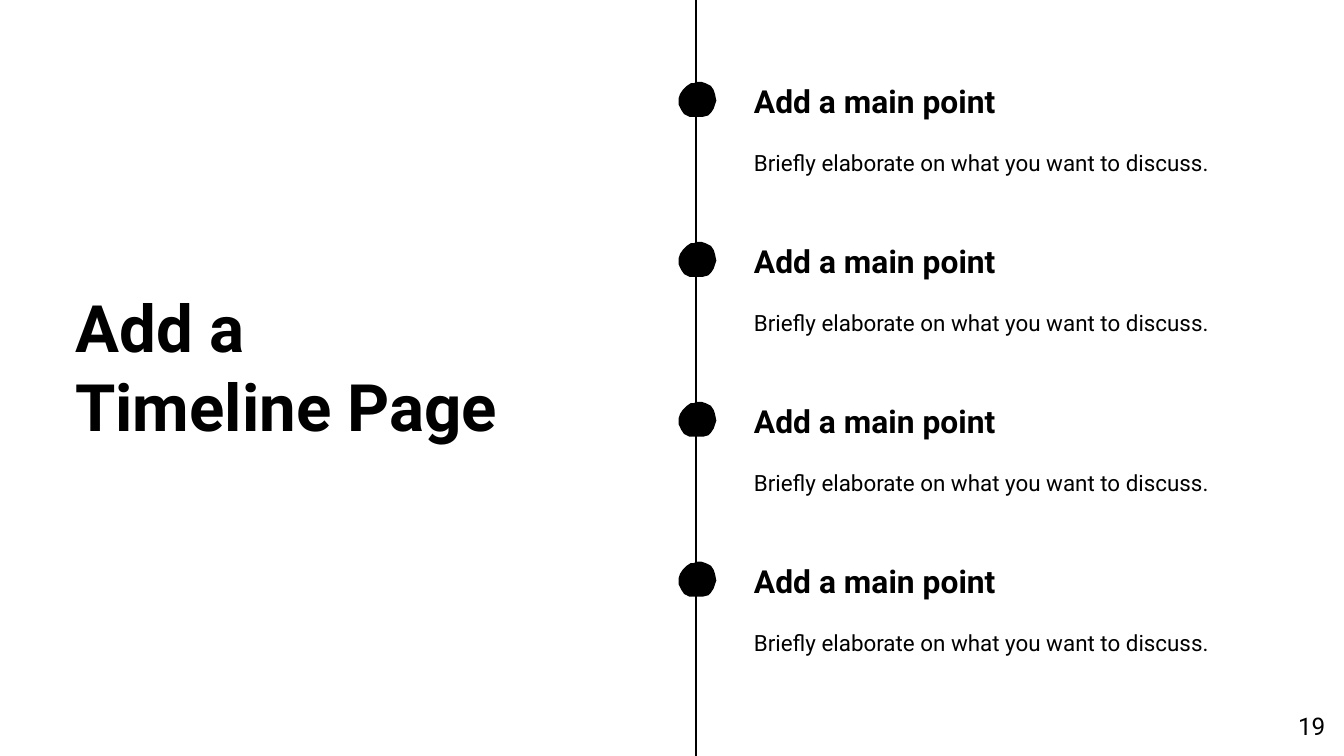
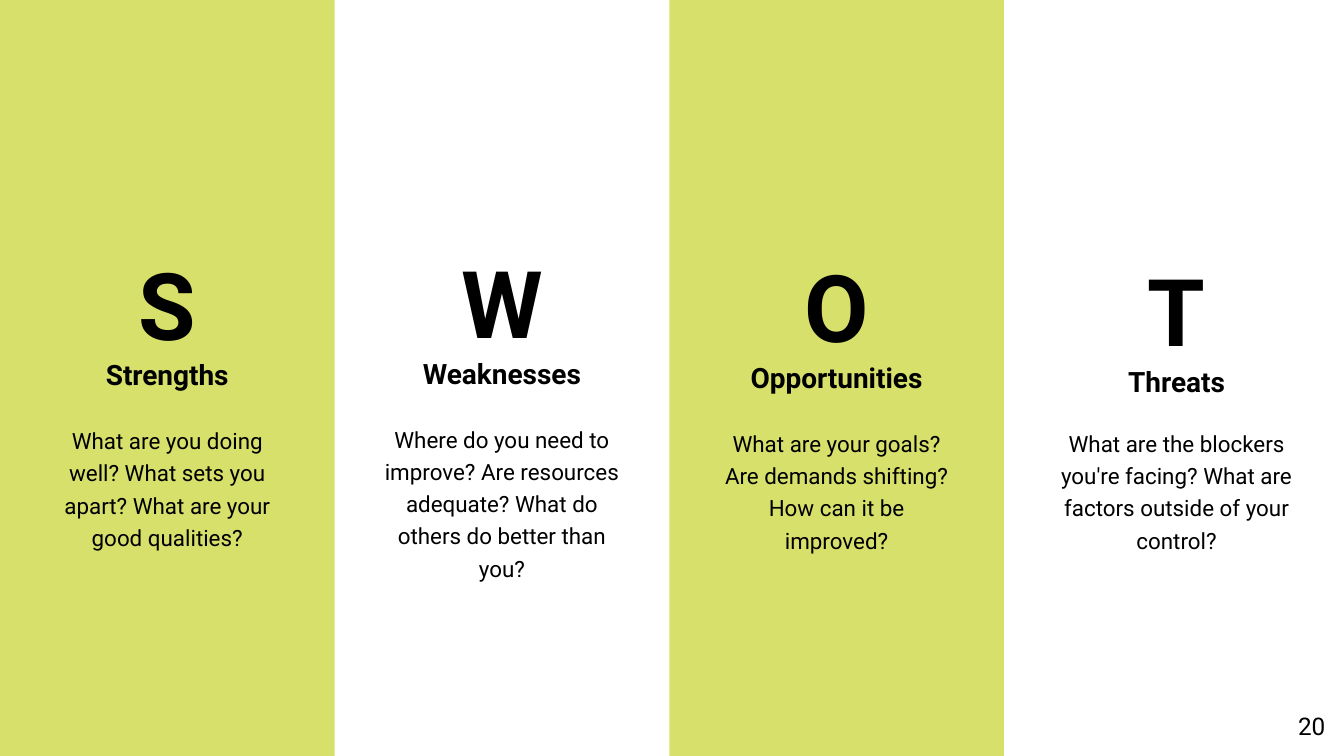
from lxml import etree
from pptx import Presentation
from pptx.dml.color import RGBColor
from pptx.enum import shapes, text
from pptx.oxml.ns import qn
from pptx.util import Inches, Pt

W = 10
H = W * 9 / 16
INK, LIME = "000000", "D6E06B"
FONT = "Roboto"
LEFT, MID, RIGHT = text.PP_ALIGN.LEFT, text.PP_ALIGN.CENTER, text.PP_ALIGN.RIGHT

# Outline of the hand-drawn dot, in hundredths of an inch
BLOB = [(14, 0), (17, 0), (20, 1), (22, 2), (24, 3), (26, 6), (27, 9), (28, 14),
        (27, 17), (26, 20), (24, 23), (22, 25), (18, 26), (14, 26), (11, 26),
        (8, 26), (6, 25), (4, 24), (2, 21), (1, 19), (0, 17), (0, 12), (1, 9),
        (3, 6), (6, 3), (9, 1), (11, 1)]

POINTS = [("Add a main point", "Briefly elaborate on what you want to discuss.")] * 4

# Left, top, offset and height of the body, letter, heading, body
SWOT = [
    (0.34, 1.67, 1.47, 0.93, "S", "Strengths",
     "What are you doing well? What sets you apart? What are your good qualities?"),
    (2.83, 1.66, 1.47, 1.17, "W", "Weaknesses",
     "Where do you need to improve? Are resources adequate? "
     "What do others do better than you?"),
    (5.32, 1.69, 1.47, 0.93, "O", "Opportunities",
     "What are your goals? Are demands shifting? How can it be improved?"),
    (7.85, 1.72, 1.44, 0.93, "T", "Threats",
     "What are the blockers you're facing? What are factors outside of your control?"),
]


def color(code):
    return RGBColor.from_string(code)


def paint(shape, code):
    shape.shadow.inherit = False
    shape.fill.solid()
    shape.fill.fore_color.rgb = color(code)
    shape.line.fill.background()


def write(shape, words, size, bold=False, align=LEFT, space=None, inset=0, grow=True):
    frame = shape.text_frame
    frame.word_wrap = True
    frame.vertical_anchor = text.MSO_ANCHOR.TOP
    fit = text.MSO_AUTO_SIZE
    frame.auto_size = fit.SHAPE_TO_FIT_TEXT if grow else fit.NONE
    frame.margin_left = frame.margin_right = Inches(inset)
    frame.margin_top = frame.margin_bottom = Inches(inset)
    frame.text = words
    par = frame.paragraphs[0]
    par.alignment = align
    if space:
        par.line_spacing = space
    font = par.font
    font.name, font.size, font.bold = FONT, Pt(size), bold
    font.color.rgb = color(INK)


def label(home, box, words, size, **style):
    shape = home.shapes.add_textbox(*map(Inches, box))
    write(shape, words, size, **style)


def number(slide, page):
    label(slide, (9.36, 5.19, 0.6, 0.43), str(page), 13,
          align=RIGHT, inset=0.1, grow=False)


# Timeline parts
def axis(slide, x):
    line = slide.shapes.add_connector(
        shapes.MSO_CONNECTOR.STRAIGHT, Inches(x), 0, Inches(x), Inches(H))
    line.line.color.rgb = color(INK)
    line.line.width = Pt(0.75)
    etree.SubElement(line._element.spPr, qn("a:effectLst"))


def dot(slide, x, y):
    pen = slide.shapes.build_freeform(*BLOB[0], scale=Inches(0.01))
    pen.add_line_segments(BLOB[1:], close=True)
    paint(pen.convert_to_shape(Inches(x), Inches(y)), INK)


def point(slide, x, y, wide, head, body):
    group = slide.shapes.add_group_shape()
    label(group, (x, y + 0.46, wide, 0.2), body, 12, space=1.2)
    label(group, (x, y, wide, 0.29), head, 17, bold=True)


def timeline(deck, page):
    slide = deck.slides.add_slide(deck.slide_layouts[5])
    title = slide.shapes.title
    title.left, title.top, title.width, title.height = map(
        Inches, (0.56, 2.14, 3.21, 1.18))
    write(title, "Add a Timeline Page", 35, bold=True)
    axis(slide, 5.18)
    top, step = 0.61, 1.19
    for i, (head, body) in enumerate(POINTS):
        y = top + i * step
        point(slide, 5.61, y, 3.58 if i % 2 else 3.47, head, body)
        dot(slide, 5.05, y)
    number(slide, page)


# SWOT parts
def band(slide, x, wide):
    shape = slide.shapes.add_shape(
        shapes.MSO_SHAPE.RECTANGLE, Inches(x), 0, Inches(wide), Inches(H))
    paint(shape, LIME)


def column(slide, x, y, drop, tall, letter, head, body):
    group = slide.shapes.add_group_shape()
    wide = 1.81
    style = {"align": MID, "space": 1.2}
    label(group, (x, y, wide, 0.84), letter, 50, bold=True, **style)
    label(group, (x, y + 0.94, wide, 0.25), head, 15, bold=True, **style)
    label(group, (x, y + drop, wide, tall), body, 12, **style)


def swot(deck, page):
    slide = deck.slides.add_slide(deck.slide_layouts[6])
    wide = 2.49
    for i in (0, 2):
        band(slide, i * wide, wide)
    for part in SWOT:
        column(slide, *part)
    number(slide, page)


def main():
    deck = Presentation()
    deck.slide_width, deck.slide_height = Inches(W), Inches(H)
    timeline(deck, 19)
    swot(deck, 20)
    deck.save("out.pptx")


if __name__ == "__main__":
    main()
